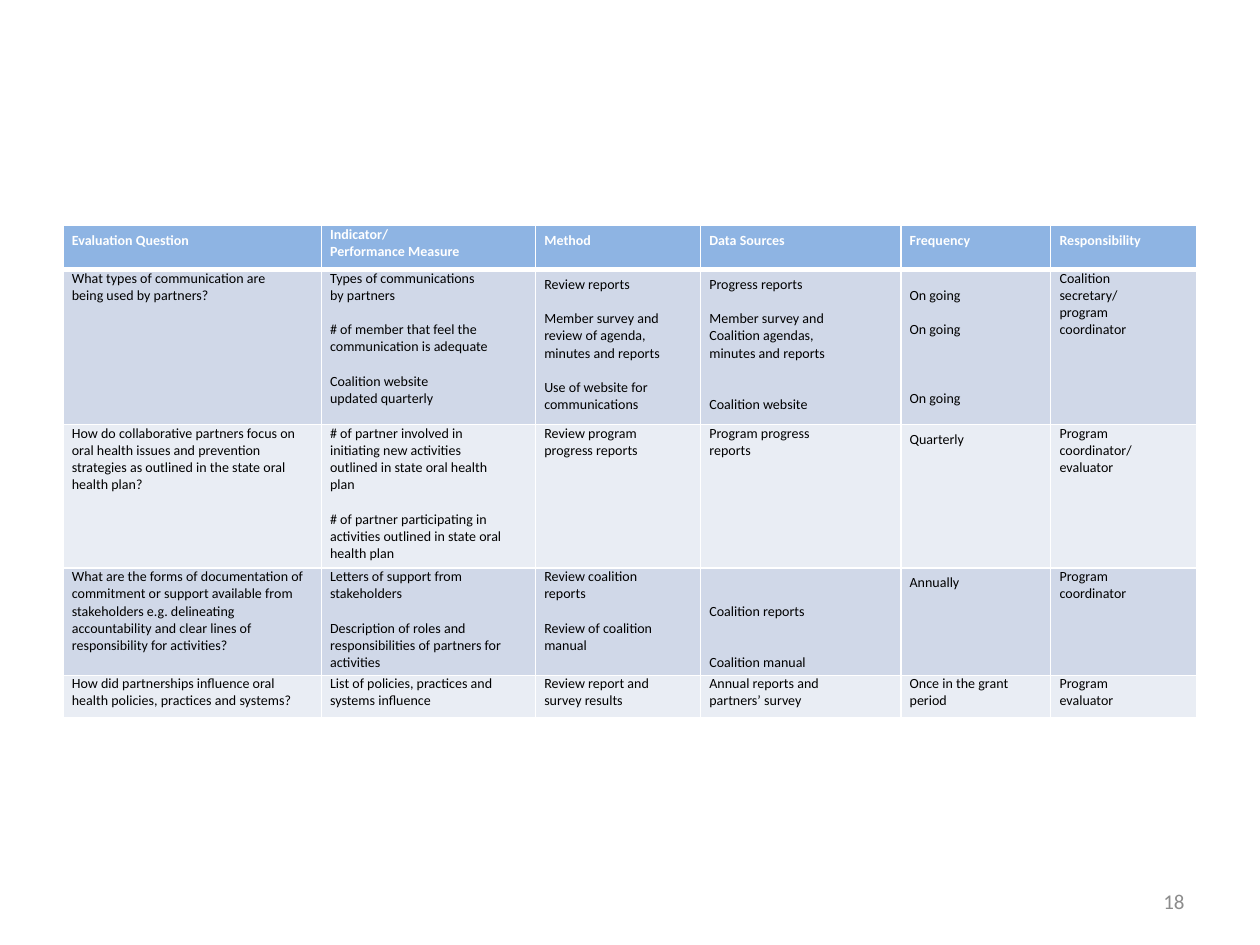
from dataclasses import dataclass

from lxml.etree import SubElement
from pptx import Presentation
from pptx.dml.color import RGBColor
from pptx.enum.text import MSO_ANCHOR as Anchor, PP_ALIGN as Align
from pptx.oxml.ns import qn
from pptx.util import Inches, Pt

COLORS = {
    "header": "8EB4E3",
    "band_dark": "D0D8E8",
    "band_light": "E9EDF4",
    "white": "FFFFFF",
    "black": "000000",
    "page_number": "8C8C8C",
}
FONT = "Calibri"
LINE = 9.8  # height of one 8 pt line, used as the gap between entries
COLUMN_WIDTHS = [2.05, 1.7, 1.31, 1.59, 1.19, 1.16]
ROW_HEIGHTS = [0.35, 1.23, 1.14, 0.85, 0.34]
LEFT_INDENT = 0.07
RIGHT_INDENTS = [0.07, 0.2, 0.2, 0.48, 0.2, 0.37]


@dataclass
class Entry:
    """One paragraph of a cell; spacing is a factor or a Pt length."""
    text: str
    before: float = 0
    spacing: object = None
    right: float = None


HEADER_SPACING = Pt(13.7)
FIRST_SPACING = Pt(13.4)

HEADERS = [
    [Entry("Evaluation Question", spacing=HEADER_SPACING)],
    [Entry("Indicator/"), Entry("Performance Measure")],
    [Entry("Method", spacing=HEADER_SPACING)],
    [Entry("Data Sources", spacing=HEADER_SPACING)],
    [Entry("Frequency", spacing=HEADER_SPACING)],
    [Entry("Responsibility", spacing=HEADER_SPACING)],
]
BODY = [
    [
        [Entry("What types of communication are being used by partners?", right=0.3)],
        [Entry("Types of communications by partners", right=0.45),
         Entry("# of member that feel the communication is adequate", LINE),
         Entry("Coalition website updated quarterly", LINE, right=0.45)],
        [Entry("Review reports", spacing=FIRST_SPACING),
         Entry("Member survey and review of agenda, minutes and reports", LINE),
         Entry("Use of website for communications", LINE)],
        [Entry("Progress reports", spacing=FIRST_SPACING),
         Entry("Member survey and Coalition agendas, minutes and reports", LINE),
         Entry("Coalition website", 2 * LINE)],
        [Entry("On going On going", spacing=2.0, right=0.6),
         Entry("On going", 3 * LINE)],
        [Entry("Coalition secretary/ program coordinator")],
    ],
    [
        [Entry("How do collaborative partners focus on oral health issues and "
               "prevention strategies as outlined in the state oral health plan?")],
        [Entry("# of partner involved in initiating new activities outlined in "
               "state oral health plan"),
         Entry("# of partner participating in activities outlined in state oral "
               "health plan", LINE)],
        [Entry("Review program progress reports")],
        [Entry("Program progress reports")],
        [Entry("Quarterly", spacing=FIRST_SPACING)],
        [Entry("Program coordinator/ evaluator")],
    ],
    [
        [Entry("What are the forms of documentation of commitment or support "
               "available from stakeholders e.g. delineating accountability and "
               "clear lines of responsibility for activities?")],
        [Entry("Letters of support from stakeholders"),
         Entry("Description of roles and responsibilities of partners for "
               "activities", LINE)],
        [Entry("Review coalition reports"),
         Entry("Review of coalition manual", LINE)],
        [Entry("Coalition reports Coalition manual", spacing=3.0)],
        [Entry("Annually", spacing=FIRST_SPACING)],
        [Entry("Program coordinator")],
    ],
    [
        [Entry("How did partnerships influence oral health policies, practices "
               "and systems?")],
        [Entry("List of policies, practices and systems influence")],
        [Entry("Review report and survey results")],
        [Entry("Annual reports and partners’ survey")],
        [Entry("Once in the grant period")],
        [Entry("Program evaluator")],
    ],
]


def write_text(paragraph, text, size=8, color="black", bold=False,
               align=Align.LEFT, before=0, spacing=None, left=0, right=0):
    paragraph.alignment = align
    paragraph.space_before = Pt(before)
    if spacing is not None:
        paragraph.line_spacing = spacing
    properties = paragraph._p.get_or_add_pPr()
    properties.set("marL", str(Inches(left)))
    properties.set("marR", str(Inches(right)))
    run = paragraph.add_run()
    run.text = text
    run.font.name = FONT
    run.font.size = Pt(size)
    run.font.bold = bold
    run.font.color.rgb = RGBColor.from_string(COLORS[color])


def set_borders(cell, top=1, bottom=1):
    """Draw white cell borders; must run before the cell gets its fill."""
    properties = cell._tc.get_or_add_tcPr()
    for side, width in (("L", 1), ("R", 1), ("T", top), ("B", bottom)):
        line = SubElement(properties, qn(f"a:ln{side}"), w=str(Pt(width)))
        fill = SubElement(line, qn("a:solidFill"))
        SubElement(fill, qn("a:srgbClr"), val=COLORS["white"])


def fill_cell(cell, entries, fill, right_indent, **text_format):
    cell.margin_left = cell.margin_right = cell.margin_top = cell.margin_bottom = 0
    cell.fill.solid()
    cell.fill.fore_color.rgb = RGBColor.from_string(COLORS[fill])
    frame = cell.text_frame
    for index, entry in enumerate(entries):
        paragraph = frame.add_paragraph() if index else frame.paragraphs[0]
        right = right_indent if entry.right is None else entry.right
        write_text(paragraph, entry.text, before=entry.before,
                   spacing=entry.spacing, left=LEFT_INDENT, right=right,
                   **text_format)


def add_evaluation_table(slide):
    rows = [HEADERS] + BODY
    table = slide.shapes.add_table(
        len(rows), len(COLUMN_WIDTHS), Inches(0.5), Inches(1.79),
        Inches(sum(COLUMN_WIDTHS)), Inches(sum(ROW_HEIGHTS))).table
    for column, width in zip(table.columns, COLUMN_WIDTHS):
        column.width = Inches(width)
    for row, height in zip(table.rows, ROW_HEIGHTS):
        row.height = Inches(height)
    for row_index, row_entries in enumerate(rows):
        is_header = row_index == 0
        band = "band_dark" if row_index % 2 else "band_light"
        for column_index, entries in enumerate(row_entries):
            cell = table.cell(row_index, column_index)
            set_borders(cell, top=3 if row_index == 1 else 1,
                        bottom=3 if is_header else 1)
            fill_cell(cell, entries, "header" if is_header else band,
                      0 if is_header else RIGHT_INDENTS[column_index],
                      color="white" if is_header else "black", bold=is_header)


def add_page_number(slide, number):
    box = slide.shapes.add_textbox(Inches(7.17), Inches(6.95), Inches(2.33), Inches(0.4))
    frame = box.text_frame
    frame.word_wrap = True
    frame.vertical_anchor = Anchor.MIDDLE
    write_text(frame.paragraphs[0], number, size=12, color="page_number",
               align=Align.RIGHT)


def main():
    presentation = Presentation()
    presentation.slide_width = Inches(10)
    presentation.slide_height = Inches(7.5)
    slide = presentation.slides.add_slide(presentation.slide_layouts[6])
    add_page_number(slide, "18")
    add_evaluation_table(slide)
    presentation.save("out.pptx")


if __name__ == "__main__":
    main()
